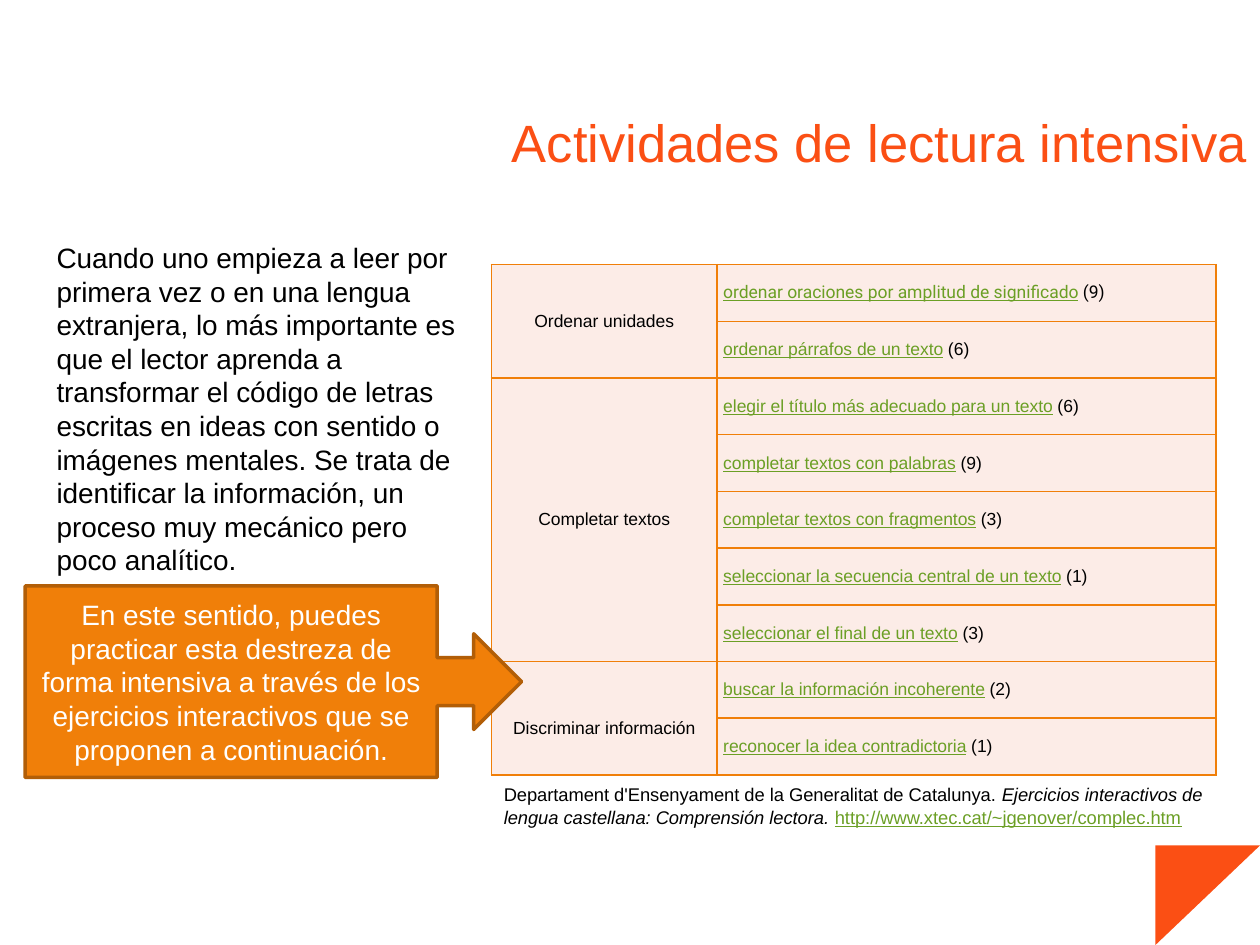
from lxml.etree import SubElement
from pptx import Presentation
from pptx.dml.color import RGBColor
from pptx.enum.shapes import MSO_SHAPE
from pptx.enum.text import MSO_ANCHOR, PP_ALIGN
from pptx.oxml.ns import qn
from pptx.util import Inches, Pt

RED = RGBColor(0xFB, 0x4F, 0x14)
ORANGE = RGBColor(0xF0, 0x7F, 0x09)
BROWN = RGBColor(0xB2, 0x5E, 0x07)
PINK = RGBColor(0xFC, 0xEC, 0xE7)
GREEN = RGBColor(0x6B, 0x9F, 0x25)
BLACK = RGBColor(0, 0, 0)
WHITE = RGBColor(0xFF, 0xFF, 0xFF)


def add_run(p, text, size=10, color=BLACK, font="Arial", italic=False, underline=False, align=PP_ALIGN.LEFT):
    p.alignment = align
    r = p.add_run()
    r.text = text
    r.font.size = Pt(size)
    r.font.name = font
    r.font.color.rgb = color
    r.font.italic = italic
    r.font.underline = underline


prs = Presentation()
prs.slide_width, prs.slide_height = Inches(10), Inches(7.5)
s = prs.slides.add_slide(prs.slide_layouts[6])

corner = s.shapes.add_shape(MSO_SHAPE.RIGHT_TRIANGLE, Inches(9.19), Inches(6.69), Inches(0.79), Inches(0.83))
corner.rotation = 90
corner.shadow.inherit = False
corner.fill.solid()
corner.fill.fore_color.rgb = RED
corner.line.fill.background()

title = s.shapes.add_textbox(Inches(3.9), Inches(0.84), Inches(6), Inches(0.56))
tf = title.text_frame
tf.word_wrap = True
tf.vertical_anchor = MSO_ANCHOR.MIDDLE
tf.margin_left = tf.margin_right = tf.margin_top = tf.margin_bottom = 0
add_run(tf.paragraphs[0], "Actividades de lectura intensiva", size=30, color=RED, align=PP_ALIGN.RIGHT)

groups = [
    ("Ordenar unidades", [
        ("ordenar oraciones por amplitud de significado", 9),
        ("ordenar párrafos de un texto", 6),
    ]),
    ("Completar textos", [
        ("elegir el título más adecuado para un texto", 6),
        ("completar textos con palabras", 9),
        ("completar textos con fragmentos", 3),
        ("seleccionar la secuencia central de un texto", 1),
        ("seleccionar el final de un texto", 3),
    ]),
    ("Discriminar información", [
        ("buscar la información incoherente", 2),
        ("reconocer la idea contradictoria", 1),
    ]),
]
table = s.shapes.add_table(9, 2, Inches(3.9), Inches(2.1), Inches(5.75), Inches(4.05)).table
table.first_row = table.horz_banding = False
table.columns[0].width, table.columns[1].width = Inches(1.79), Inches(3.96)

for cell in table.iter_cells():
    cell.vertical_anchor = MSO_ANCHOR.MIDDLE
    cell.margin_left = cell.margin_right = Inches(0.05)
    cell.margin_top = cell.margin_bottom = Inches(0.03)
    tcPr = cell._tc.get_or_add_tcPr()
    for side in ("a:lnL", "a:lnR", "a:lnT", "a:lnB"):
        ln = SubElement(tcPr, qn(side), w=str(Pt(1)))
        SubElement(SubElement(ln, qn("a:solidFill")), qn("a:srgbClr"), val=str(ORANGE))
    cell.fill.solid()
    cell.fill.fore_color.rgb = PINK

row = 0
for name, activities in groups:
    head = table.cell(row, 0)
    head.merge(table.cell(row + len(activities) - 1, 0))
    add_run(head.text_frame.paragraphs[0], name, align=PP_ALIGN.CENTER)
    for activity, count in activities:
        p = table.cell(row, 1).text_frame.paragraphs[0]
        font = "Roboto" if row == 0 else "Arial"
        add_run(p, activity, color=GREEN, font=font, underline=True)
        add_run(p, f" ({count})", font=font)
        row += 1
head.margin_top = Inches(0.19)

credit = s.shapes.add_textbox(Inches(3.9), Inches(6.17), Inches(5.87), Inches(0.45))
credit.text_frame.word_wrap = True
p = credit.text_frame.paragraphs[0]
add_run(p, "Departament d'Ensenyament de la Generalitat de Catalunya. ", size=10.5)
add_run(p, "Ejercicios interactivos de lengua castellana: Comprensión lectora. ", size=10.5, italic=True)
add_run(p, "http://www.xtec.cat/~jgenover/complec.htm", size=10.5, color=GREEN, underline=True)

intro = s.shapes.add_textbox(Inches(0.35), Inches(1.86), Inches(3.39), Inches(2.79))
intro.text_frame.word_wrap = True
add_run(
    intro.text_frame.paragraphs[0],
    "Cuando uno empieza a leer por primera vez o en una lengua extranjera, lo más importante es "
    "que el lector aprenda a transformar el código de letras escritas en ideas con sentido o "
    "imágenes mentales. Se trata de identificar la información, un proceso muy mecánico pero "
    "poco analítico.",
    size=16,
)

callout = s.shapes.add_shape(
    MSO_SHAPE.RIGHT_ARROW_CALLOUT, Inches(0.2), Inches(4.65), Inches(3.94), Inches(1.52))
callout.adjustments[3] = 0.83
callout.shadow.inherit = False
callout.fill.solid()
callout.fill.fore_color.rgb = ORANGE
callout.line.color.rgb = BROWN
callout.line.width = Pt(2)
tf = callout.text_frame
tf.word_wrap = True
tf.vertical_anchor = MSO_ANCHOR.MIDDLE
add_run(
    tf.paragraphs[0],
    "En este sentido, puedes practicar esta destreza de forma intensiva a través de los "
    "ejercicios interactivos que se proponen a continuación.",
    size=16, color=WHITE, align=PP_ALIGN.CENTER,
)

prs.save("out.pptx")
